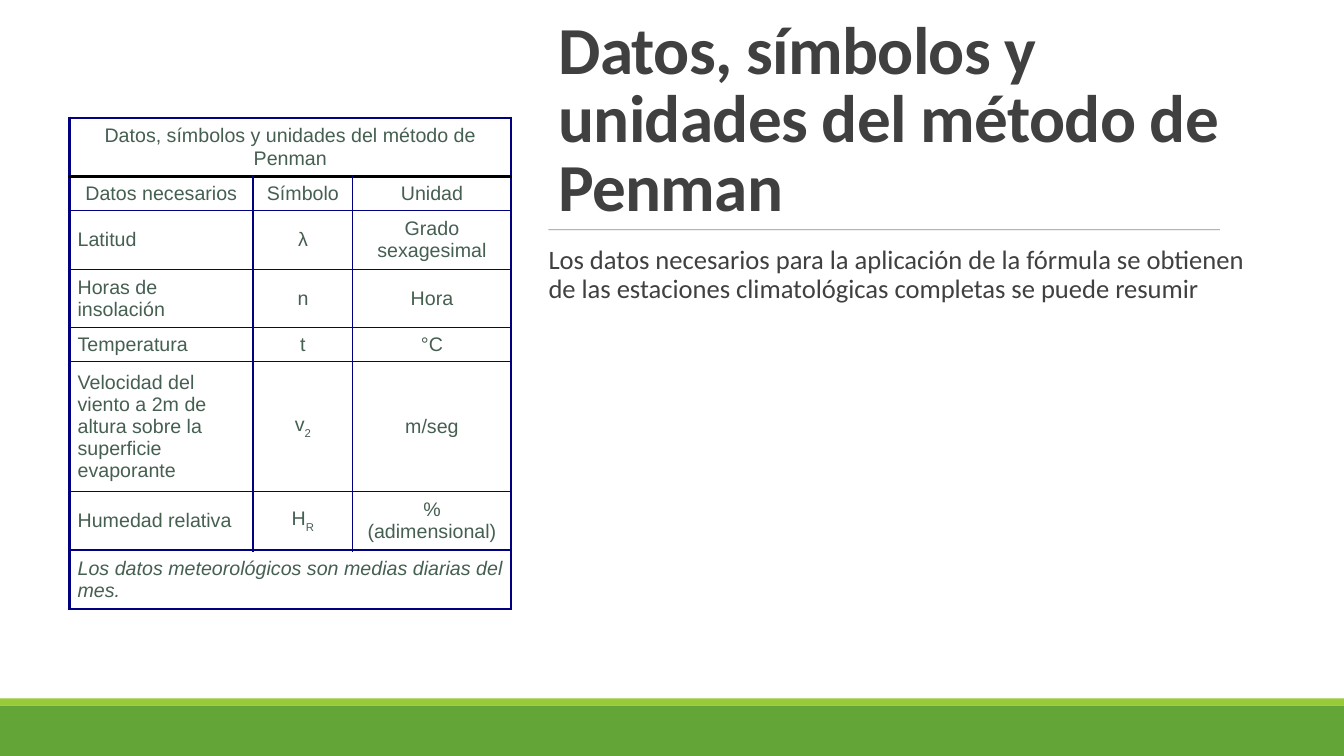
from dataclasses import dataclass

from lxml.etree import SubElement
from pptx import Presentation
from pptx.dml.color import RGBColor
from pptx.enum.shapes import MSO_CONNECTOR as Conn, MSO_SHAPE as Shape
from pptx.enum.text import MSO_ANCHOR as Anchor, PP_ALIGN as Align
from pptx.oxml.ns import qn
from pptx.util import Inches, Pt


@dataclass(frozen=True)
class Theme:
    """Colours, fonts and type sizes of the slide."""
    paper: str = "FFFFFF"
    ink: str = "404040"
    rule: str = "808080"
    lime: str = "99CB38"
    green: str = "63A537"
    cell_ink: str = "455F51"
    border: str = "000080"
    header_border: str = "000000"
    text_font: str = "Calibri"
    table_font: str = "Arial"
    title_size: int = 48
    body_size: int = 19
    cell_size: int = 14


class SlideBuilder:
    """Draws themed elements on one slide."""

    def __init__(self, s, theme):
        self.s = s
        self.theme = theme

    def style(self, p, font, size, color, bold=None, italic=None):
        """Set the font of a paragraph."""
        f = p.font
        f.name, f.size, f.bold, f.italic = font, Pt(size), bold, italic
        f.color.rgb = RGBColor.from_string(color)

    def band(self, top, height, color):
        """Draw a full-width plain band."""
        sp = self.s.shapes.add_shape(
            Shape.RECTANGLE, 0, Inches(top), Inches(13.33), Inches(height))
        sp.shadow.inherit = False
        sp.fill.solid()
        sp.fill.fore_color.rgb = RGBColor.from_string(color)
        sp.line.fill.background()

    def rule(self, x1, x2, y):
        """Draw a thin translucent horizontal line."""
        line = self.s.shapes.add_connector(
            Conn.STRAIGHT, Inches(x1), Inches(y), Inches(x2), Inches(y))
        line.line.width = Pt(0.5)
        line.line.color.rgb = RGBColor.from_string(self.theme.rule)
        spPr = line._element.spPr
        color = next(spPr.iter(qn("a:srgbClr")))
        SubElement(color, qn("a:alpha"), val="90000")
        SubElement(spPr, qn("a:effectLst"))

    def text(self, box, words, size, spacing, bold=None, anchor=Anchor.TOP, inset=0.1):
        """Add a wrapped one-paragraph text box and return its paragraph."""
        tf = self.s.shapes.add_textbox(*map(Inches, box)).text_frame
        tf.word_wrap = True
        tf.vertical_anchor = anchor
        tf.margin_left = tf.margin_right = Inches(inset)
        p = tf.paragraphs[0]
        p.add_run().text = words
        p.line_spacing = spacing
        self.style(p, self.theme.text_font, size, self.theme.ink, bold)
        return p

    def title(self, box, words):
        """Add the bold, slightly tightened title."""
        p = self.text(box, words, self.theme.title_size, 0.85, True, Anchor.BOTTOM)
        p.space_after = Pt(6)
        p.runs[0]._r.get_or_add_rPr().set("spc", "-50")

    def cell(self, cell, words, align, edges, italic=None):
        """Fill one table cell; an underscore starts a subscript."""
        tcPr = cell._tc.get_or_add_tcPr()
        for side, (color, width) in edges.items():
            ln = SubElement(tcPr, qn(f"a:ln{side}"), w=str(Pt(width)))
            fill = SubElement(ln, qn("a:solidFill"))
            SubElement(fill, qn("a:srgbClr"), val=color)
        cell.fill.background()
        cell.vertical_anchor = Anchor.MIDDLE
        cell.margin_left = cell.margin_right = Inches(0.08)
        cell.margin_top = cell.margin_bottom = Inches(0.04)
        p = cell.text_frame.paragraphs[0]
        p.alignment = align
        base, _, subscript = words.partition("_")
        if base:
            p.add_run().text = base
        if subscript:
            r = p.add_run()
            r.text = subscript
            r._r.get_or_add_rPr().set("baseline", "-30000")
        theme = self.theme
        self.style(p, theme.table_font, theme.cell_size, theme.cell_ink, italic=italic)

    def table(self, left, top, widths, heights, rows):
        """Add the bordered table; one-item rows span every column."""
        n_rows, n_cols = len(rows), len(widths)
        table = self.s.shapes.add_table(
            n_rows, n_cols, Inches(left), Inches(top),
            Inches(sum(widths)), Inches(sum(heights))).table
        table.first_row = table.horz_banding = False
        for column, width in zip(table.columns, widths):
            column.width = Inches(width)
        for row, height in zip(table.rows, heights):
            row.height = Inches(height)
        thin, thick = (self.theme.border, 1), (self.theme.border, 2)
        levels = [thick, (self.theme.header_border, 2)]
        levels += [thin] * (n_rows - 3) + [thick, thick]
        uprights = [thick] + [thin] * (n_cols - 1) + [thick]
        for i, row in enumerate(rows):
            spans = len(row) == 1
            if spans:
                table.cell(i, 0).merge(table.cell(i, n_cols - 1))
            for j in range(n_cols):
                if spans and j:
                    continue
                right = n_cols if spans else j + 1
                edges = {"L": uprights[j], "R": uprights[right],
                         "T": levels[i], "B": levels[i + 1]}
                footer = i == n_rows - 1
                align = Align.CENTER
                if footer:
                    align = Align.JUSTIFY
                elif i > 1 and j == 0:
                    align = Align.LEFT
                self.cell(table.cell(i, j), row[j], align, edges, footer or None)


ROWS = [
    ["Datos, símbolos y unidades del método de Penman"],
    ["Datos necesarios", "Símbolo", "Unidad"],
    ["Latitud", "λ", "Grado sexagesimal"],
    ["Horas de insolación", "n", "Hora"],
    ["Temperatura", "t", "°C"],
    ["Velocidad del viento a 2m de altura sobre la superficie evaporante", "v_2", "m/seg"],
    ["Humedad relativa", "H_R", "% (adimensional)"],
    ["Los datos meteorológicos son medias diarias del mes."],
]


def main():
    """Build and save the slide."""
    prs = Presentation()
    prs.slide_width, prs.slide_height = Inches(13.33), Inches(7.5)
    theme = Theme()
    b = SlideBuilder(prs.slides.add_slide(prs.slide_layouts[6]), theme)
    b.band(0, 6.93, theme.paper)
    b.title((5.44, 0.69, 7.19, 1.59), ROWS[0][0])
    b.rule(5.44, 12.1, 2.28)
    b.text((5.44, 2.4, 7.19, 4.01),
           "Los datos necesarios para la aplicación de la fórmula se obtienen "
           "de las estaciones climatológicas completas se puede resumir",
           theme.body_size, 0.9, inset=0)
    b.band(6.93, 0.07, theme.lime)
    b.band(7, 0.5, theme.green)
    b.table(0.69, 1.17, [1.82, 0.99, 1.57],
            [0.58, 0.34, 0.58, 0.58, 0.34, 1.29, 0.58, 0.58], ROWS)
    prs.save("out.pptx")


if __name__ == "__main__":
    main()
